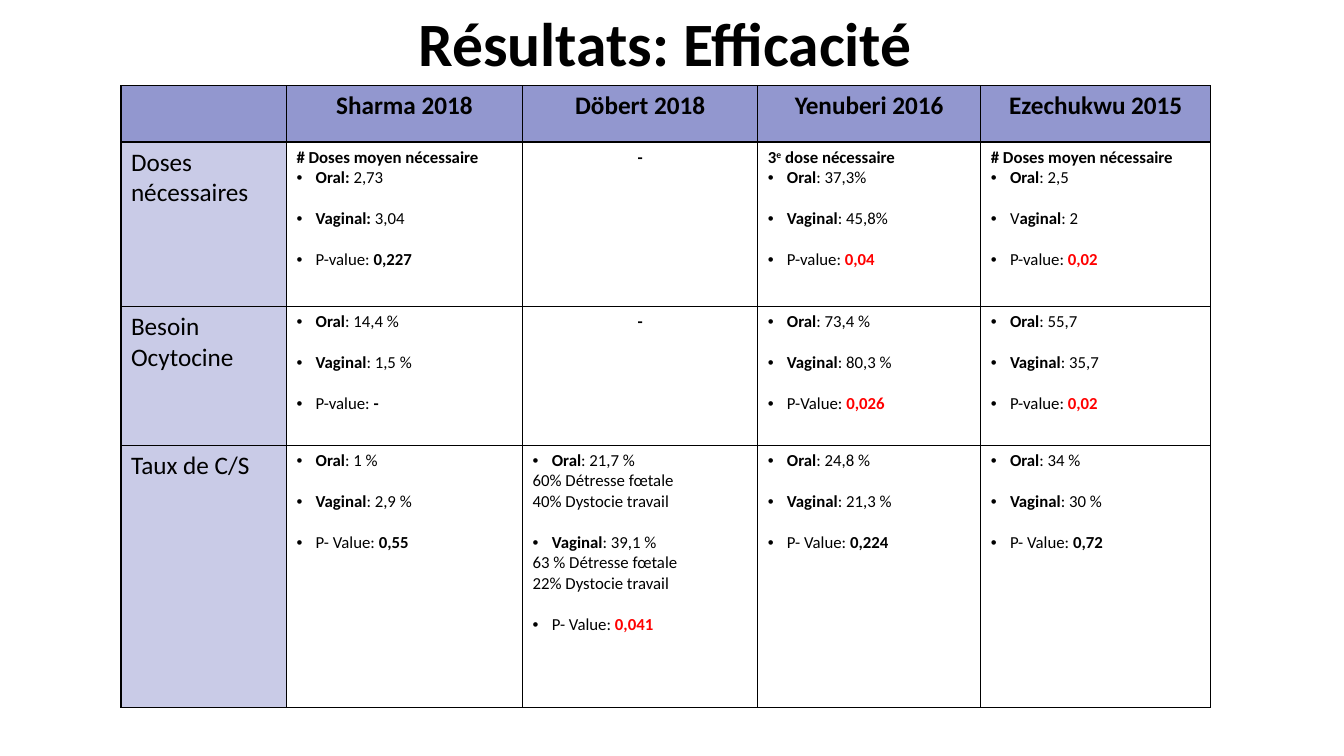
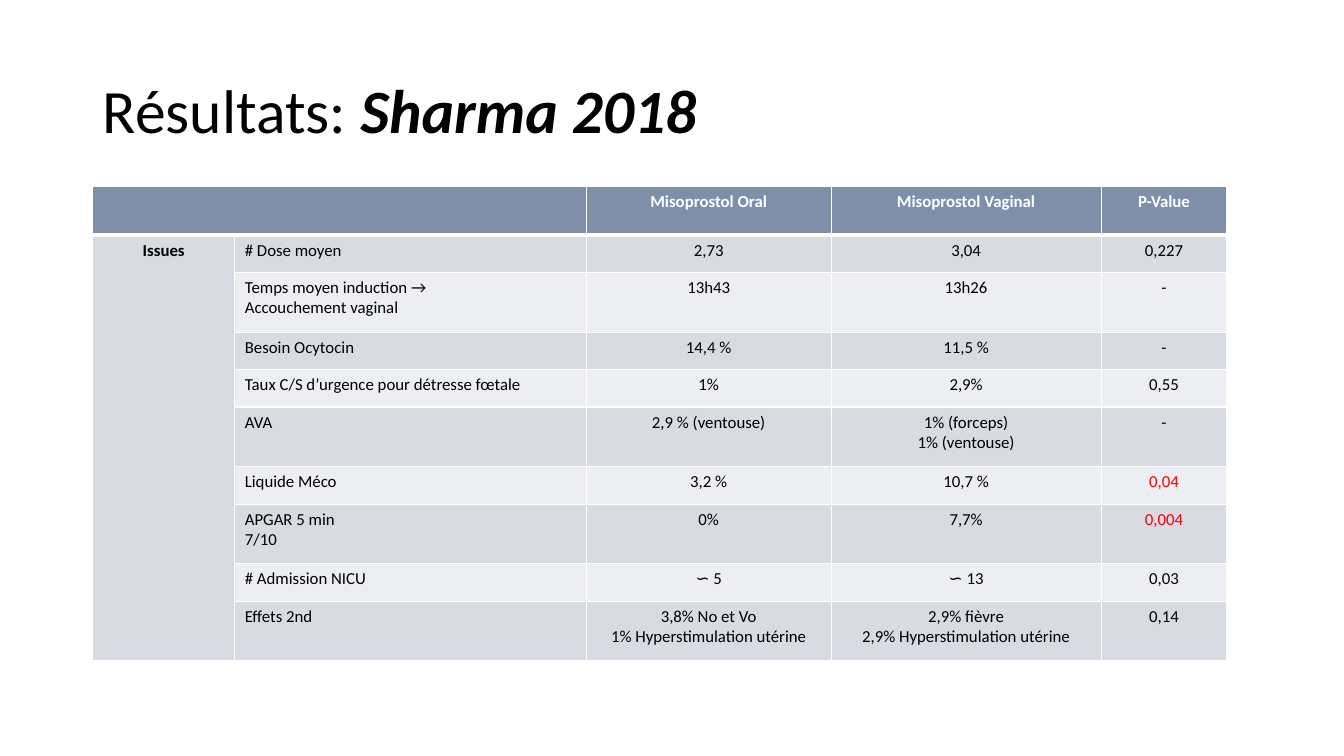
import dataclasses
import typing

import lxml.etree
import pptx
import pptx.dml.color
import pptx.enum.text
import pptx.oxml.ns
import pptx.util

ALIGN = pptx.enum.text.PP_ALIGN
ANCHOR = pptx.enum.text.MSO_ANCHOR


@dataclasses.dataclass(frozen=True)
class Theme:
    width: float = 13.33
    height: float = 7.5
    font: str = "Calibri"
    ink: str = "000000"
    paper: str = "FFFFFF"
    alert: str = "FF0000"
    violet: str = "9297CF"
    lilac: str = "C9CBE7"
    slate: str = "7F8FA9"
    mist: str = "D8DBE2"
    pale: str = "ECEEF1"
    title_size: float = 44
    heading_size: float = 18
    body_size: float = 12
    line_gap: float = 14.65
    indent: float = 0.19
    rule: float = 1
    heavy_rule: float = 3


THEME = Theme()


class Place(typing.NamedTuple):
    left: float
    top: float
    width: float
    height: float

    def lengths(self) -> list[int]:
        sides = (THEME.width, THEME.height) * 2
        return [pptx.util.Inches(side * share / 100) for side, share in zip(sides, self)]


class Span(typing.NamedTuple):
    text: str
    bold: bool = False
    italic: bool = False
    alert: bool = False
    raised: bool = False


@dataclasses.dataclass(frozen=True)
class Line:
    spans: tuple[Span, ...]
    bullet: bool = False
    gap: bool = False


@dataclasses.dataclass(frozen=True)
class Entry:
    lines: tuple[Line, ...] = ()
    fill: str = THEME.paper
    color: str = THEME.ink
    size: float = THEME.body_size
    align: ALIGN = ALIGN.LEFT


@dataclasses.dataclass(frozen=True)
class Grid:
    place: Place
    columns: tuple[float, ...]
    rows: tuple[float, ...]
    entries: list[list[Entry]]
    border: str
    header_rule: float = THEME.rule
    merges: tuple[tuple[int, int, int, int], ...] = ()


def rgb(color: str) -> pptx.dml.color.RGBColor:
    return pptx.dml.color.RGBColor.from_string(color)


def add_node(parent: typing.Any, tag: str, **attributes: str) -> typing.Any:
    return lxml.etree.SubElement(parent, pptx.oxml.ns.qn(tag), attributes)


def line(text: str, *, bold: bool = False, bullet: bool = False, gap: bool = False,
         alert: bool = False) -> Line:
    spans = tuple(
        Span(part, bold or index % 2 == 1, alert=alert and (bullet is False or index % 2 == 1))
        for index, part in enumerate(text.split("*")) if part
    )
    return Line(spans, bullet, gap)


def lines(text: str, *, bold: bool = False, alert: bool = False) -> tuple[Line, ...]:
    return tuple(line(part, bold=bold, alert=alert) for part in text.split("\n"))


def measures(oral: str, vaginal: str, chance: str, *, alert: bool = False,
             lead: tuple[Line, ...] = (), oral_notes: str = "",
             vaginal_notes: str = "") -> Entry:
    return Entry((
        *lead,
        line(oral, bullet=True),
        *(lines(oral_notes) if oral_notes else ()),
        line(vaginal, bullet=True, gap=True),
        *(lines(vaginal_notes) if vaginal_notes else ()),
        line(chance, bullet=True, gap=True, alert=alert),
    ))


def write(frame: typing.Any, content: tuple[Line, ...], *, size: float,
          color: str = THEME.ink, align: ALIGN = ALIGN.LEFT, spacing: float = 1.0) -> None:
    frame.word_wrap = True
    if not content:
        add_node(frame.paragraphs[0]._p, "a:endParaRPr", sz=str(int(size * 100)))
    for index, item in enumerate(content):
        para = frame.paragraphs[0] if index == 0 else frame.add_paragraph()
        if item.bullet:
            properties = para._p.get_or_add_pPr()
            indent = pptx.util.Inches(THEME.indent)
            properties.set("marL", str(indent))
            properties.set("indent", str(-indent))
            add_node(properties, "a:buFont", typeface="Arial")
            add_node(properties, "a:buChar", char="•")
        para.alignment = align
        para.line_spacing = spacing
        if item.gap:
            para.space_before = pptx.util.Pt(THEME.line_gap)
        for span in item.spans:
            run = para.add_run()
            run.text = span.text
            font = run.font
            font.name = THEME.font
            font.size = pptx.util.Pt(size)
            font.bold = span.bold
            font.italic = span.italic
            font.color.rgb = rgb(THEME.alert if span.alert else color)
            if span.raised:
                font._element.set("baseline", "30000")


def add_title(page: typing.Any, place: Place, spans: tuple[Span, ...], *,
              align: ALIGN = ALIGN.LEFT, anchor: ANCHOR = ANCHOR.TOP,
              spacing: float = 1.0) -> None:
    box = page.shapes.add_textbox(*place.lengths())
    box.text_frame.vertical_anchor = anchor
    write(box.text_frame, (Line(spans),), size=THEME.title_size, align=align, spacing=spacing)


def set_borders(cell: typing.Any, color: str, top: float, bottom: float) -> None:
    properties = cell._tc.get_or_add_tcPr()
    widths = {"a:lnL": THEME.rule, "a:lnR": THEME.rule, "a:lnT": top, "a:lnB": bottom}
    for tag, width in widths.items():
        edge = add_node(properties, tag, w=str(pptx.util.Pt(width)))
        add_node(add_node(edge, "a:solidFill"), "a:srgbClr", val=color)


def add_grid(page: typing.Any, grid: Grid) -> None:
    bounds = grid.place.lengths()
    table = page.shapes.add_table(len(grid.rows), len(grid.columns), *bounds).table
    table.first_row = table.horz_banding = False
    for column, share in zip(table.columns, grid.columns):
        column.width = int(bounds[2] * share / sum(grid.columns))
    for row, share in zip(table.rows, grid.rows):
        row.height = int(bounds[3] * share / sum(grid.rows))
    for row_index, row_entries in enumerate(grid.entries):
        top = grid.header_rule if row_index == 1 else THEME.rule
        bottom = grid.header_rule if row_index == 0 else THEME.rule
        for column_index, entry in enumerate(row_entries):
            cell = table.cell(row_index, column_index)
            set_borders(cell, grid.border, top, bottom)
            cell.fill.solid()
            cell.fill.fore_color.rgb = rgb(entry.fill)
            write(cell.text_frame, entry.lines, size=entry.size, color=entry.color,
                  align=entry.align)
    for first_row, first_column, last_row, last_column in grid.merges:
        table.cell(first_row, first_column).merge(table.cell(last_row, last_column))


def efficacy_entries() -> list[list[Entry]]:
    def header(text: str) -> Entry:
        return Entry(lines(text, bold=True), THEME.violet, size=THEME.heading_size,
                     align=ALIGN.CENTER)

    def label(text: str) -> Entry:
        return Entry(lines(text), THEME.lilac, size=THEME.heading_size)

    dash = Entry(lines("-", bold=True), align=ALIGN.CENTER)
    mean_doses = lines("# Doses moyen nécessaire", bold=True)
    third_dose = (Line((Span("3", True), Span("e", True, raised=True),
                        Span(" dose nécessaire", True))),)
    studies = ("Sharma 2018", "Döbert 2018", "Yenuberi 2016", "Ezechukwu 2015")
    return [
        [Entry(fill=THEME.violet), *map(header, studies)],
        [
            label("Doses nécessaires"),
            measures("*Oral: *2,73", "*Vaginal: *3,04", "P-value: *0,227*", lead=mean_doses),
            dash,
            measures("*Oral*: 37,3%", "*Vaginal*: 45,8%", "P-value: *0,04*", alert=True,
                     lead=third_dose),
            measures("*Oral*: 2,5", "V*aginal*: 2", "P-value: *0,02*", alert=True,
                     lead=mean_doses),
        ],
        [
            label("Besoin Ocytocine"),
            measures("*Oral*: 14,4 %", "*Vaginal*: 1,5 %", "P-value:* -*"),
            dash,
            measures("*Oral*: 73,4 %", "*Vaginal*: 80,3 %", "P-Value: *0,026*", alert=True),
            measures("*Oral*: 55,7", "*Vaginal*: 35,7", "P-value: *0,02*", alert=True),
        ],
        [
            label("Taux de C/S"),
            measures("*Oral*: 1 %", "*Vaginal*: 2,9 %", "P- Value: *0,55*"),
            measures("*Oral*: 21,7 %", "*Vaginal*: 39,1 %", "P- Value: *0,041*", alert=True,
                     oral_notes="60% Détresse fœtale\n40% Dystocie travail",
                     vaginal_notes="63 % Détresse fœtale\n22% Dystocie travail"),
            measures("*Oral*: 24,8 %", "*Vaginal*: 21,3 %", "P- Value: *0,224*"),
            measures("*Oral*: 34 %", "*Vaginal*: 30 %", "P- Value: *0,72*"),
        ],
    ]


def sharma_entries() -> list[list[Entry]]:
    outcomes = (
        ("# Dose moyen", "2,73", "3,04", "0,227"),
        ("Temps moyen induction →\nAccouchement vaginal", "13h43", "13h26", "-"),
        ("Besoin Ocytocin", "14,4 %", "11,5 %", "-"),
        ("Taux C/S d’urgence pour détresse fœtale", "1%", "2,9%", "0,55"),
        ("AVA", "2,9 % (ventouse)", "1% (forceps)\n1% (ventouse)", "-"),
        ("Liquide Méco", "3,2 %", "10,7 %", "0,04"),
        ("APGAR 5 min\n7/10", "0%", "7,7%", "0,004"),
        ("# Admission NICU", "∽ 5", "∽ 13", "0,03"),
        ("Effets 2nd", "3,8% No et Vo\n1% Hyperstimulation utérine",
         "2,9% fièvre\n2,9% Hyperstimulation utérine", "0,14"),
    )
    highlighted = ("0,04", "0,004")
    headers = ("Misoprostol Oral", "Misoprostol Vaginal", "P-Value")
    entries = [[Entry(fill=THEME.slate)] * 2 + [
        Entry(lines(text, bold=True), THEME.slate, THEME.paper, align=ALIGN.CENTER)
        for text in headers
    ]]
    for index, (outcome, *values) in enumerate(outcomes):
        fill = THEME.pale if index % 2 else THEME.mist
        group = lines("Issues", bold=True) if index == 0 else ()
        entries.append([
            Entry(group, THEME.mist, align=ALIGN.CENTER),
            Entry(lines(outcome), fill),
            *(Entry(lines(value, alert=value in highlighted), fill, align=ALIGN.CENTER)
              for value in values),
        ])
    return entries


def main() -> None:
    deck = pptx.Presentation()
    deck.slide_width = pptx.util.Inches(THEME.width)
    deck.slide_height = pptx.util.Inches(THEME.height)
    blank = deck.slide_layouts[6]

    efficacy = deck.slides.add_slide(blank)
    add_grid(efficacy, Grid(
        Place(9, 11.33, 81.1, 82.27),
        columns=(1.64, 2.34, 2.33, 2.21, 2.28),
        rows=(0.56, 1.63, 1.38, 2.6),
        entries=efficacy_entries(),
        border=THEME.ink,
    ))
    add_title(efficacy, Place(3.53, 0, 91.97, 11.2), (Span("Résultats: Efficacité", True),),
              align=ALIGN.CENTER)

    sharma = deck.slides.add_slide(blank)
    add_title(sharma, Place(6.9, 5.33, 86.27, 19.33),
              (Span("Résultats: "), Span("Sharma 2018", True, True)),
              anchor=ANCHOR.MIDDLE, spacing=0.9)
    single, double = 0.37, 0.59
    add_grid(sharma, Grid(
        Place(6.9, 24.67, 84.4, 62.8),
        columns=(1.41, 3.49, 2.43, 2.68, 1.25),
        rows=(0.48, single, double, single, single, double, single, double, single, double),
        entries=sharma_entries(),
        border=THEME.paper,
        header_rule=THEME.heavy_rule,
        merges=((0, 0, 0, 1), (1, 0, 9, 0)),
    ))
    deck.save("out.pptx")


if __name__ == "__main__":
    main()
